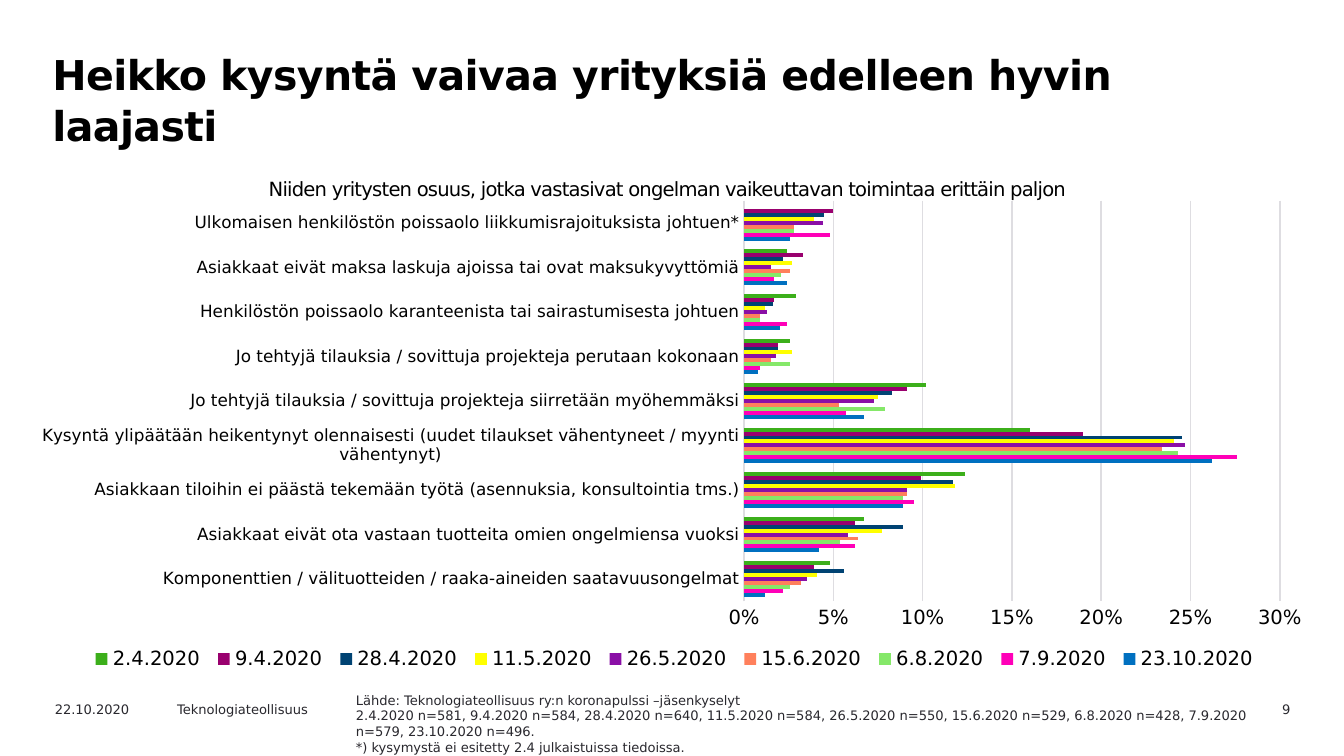
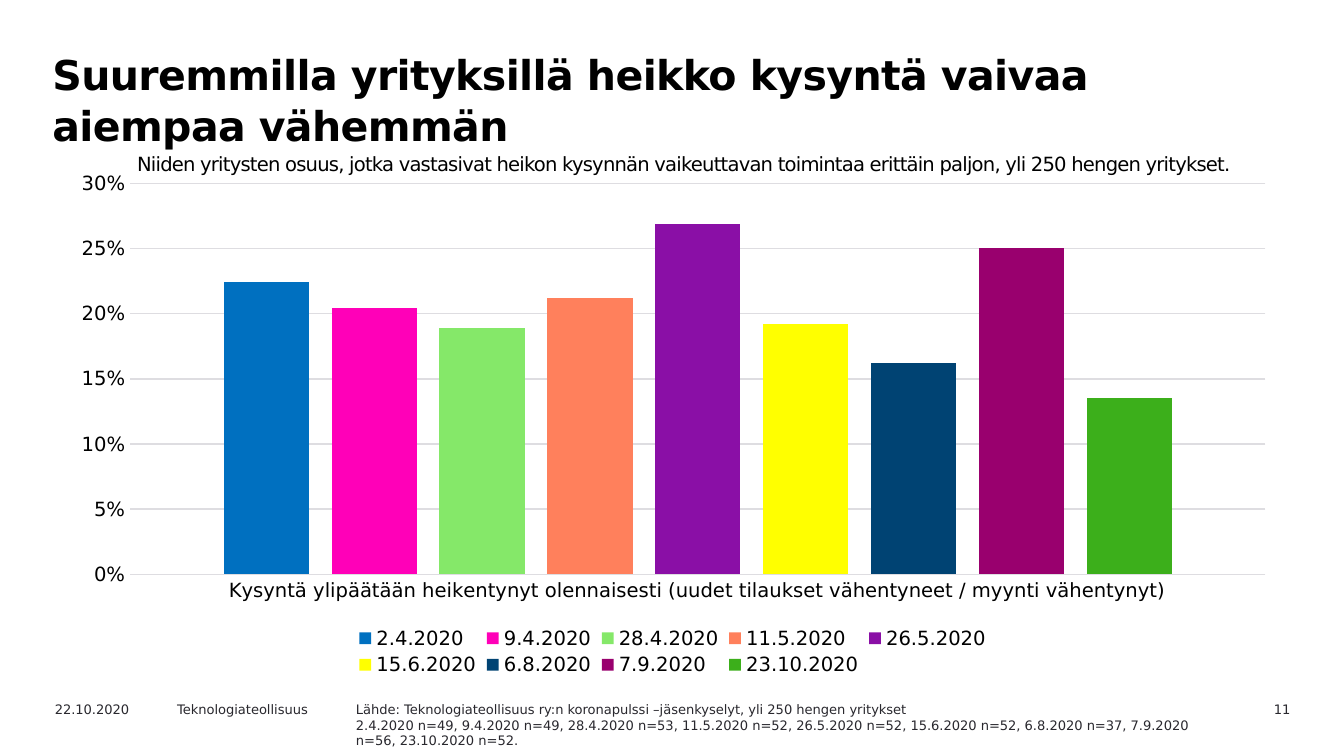
from dataclasses import dataclass
from typing import NamedTuple, Optional

from lxml.etree import SubElement
from pptx import Presentation
from pptx.chart.chart import Chart
from pptx.chart.data import CategoryChartData
from pptx.dml.color import RGBColor
from pptx.enum.chart import XL_CHART_TYPE, XL_LEGEND_POSITION, XL_TICK_MARK
from pptx.enum.text import MSO_ANCHOR, MSO_AUTO_SIZE, PP_ALIGN
from pptx.oxml.ns import qn
from pptx.slide import Slide
from pptx.text.text import TextFrame
from pptx.util import Inches, Pt

CELL = 0.1  # inches per grid column and row
COLS, ROWS = 100, 56.25


class Box(NamedTuple):
    """Left, top, width and height, in grid cells or percent of a chart."""
    left: float
    top: float
    width: float
    height: float


class Type(NamedTuple):
    size: float
    color: str
    bold: bool = False
    track: int = 0  # letter spacing, hundredths of a point


@dataclass(frozen=True)
class Theme:
    font: str = "DejaVu Sans"
    ink: str = "000000"
    soft: str = "29282E"
    rule: str = "DEDDE1"
    line: float = 0.75
    title: Type = Type(22, "000000", True, -30)
    lead: float = 27
    note: Type = Type(7, "29282E")
    head: Type = Type(10.5, "000000", False, -40)
    base: float = 10
    label: float = 10.5
    fills: tuple[str, ...] = (
        "0070C0", "FF00B8", "85E869", "FF805C", "8A0FA6",
        "FFFF00", "004373", "99006E", "3CAF1B")


THEME = Theme()
TITLE = Box(2.8, 3.1, 87.4, 7.1)
DATES = ("2.4.2020", "9.4.2020", "28.4.2020", "11.5.2020", "26.5.2020",
         "15.6.2020", "6.8.2020", "7.9.2020", "23.10.2020")
DEMAND = ("Kysyntä ylipäätään heikentynyt olennaisesti "
          "(uudet tilaukset vähentyneet / myynti vähentynyt)")


@dataclass(frozen=True)
class Plot:
    kind: XL_CHART_TYPE
    box: Box
    area: Box
    key: Box
    cats: tuple[str, ...]
    names: tuple[str, ...]
    rows: tuple[tuple[Optional[float], ...], ...]
    size: float
    overlap: int = 0
    top: Optional[float] = None


@dataclass(frozen=True)
class Page:
    number: int
    title: str
    head: str
    head_box: Box
    source: tuple[str, ...]
    source_box: Box
    plot: Plot


PAGES = (
    Page(
        9, "Heikko kysyntä vaivaa yrityksiä edelleen hyvin laajasti",
        "Niiden yritysten osuus, jotka vastasivat ongelman vaikeuttavan "
        "toimintaa erittäin paljon",
        Box(19.6, 12.8, 64.6, 2.6),
        ("Lähde: Teknologiateollisuus ry:n koronapulssi –jäsenkyselyt",
         "2.4.2020 n=581, 9.4.2020 n=584, 28.4.2020 n=640, 11.5.2020 n=584, "
         "26.5.2020 n=550, 15.6.2020 n=529, 6.8.2020 n=428, 7.9.2020 n=579, "
         "23.10.2020 n=496.",
         "*) kysymystä ei esitetty 2.4 julkaistuissa tiedoissa."),
        Box(25.5, 51, 68.6, 3.2),
        Plot(
            XL_CHART_TYPE.BAR_CLUSTERED,
            Box(1.2, 14.2, 97.6, 36.6),
            Box(55.5, 2, 40.85, 81.5), Box(5.2, 92.2, 90, 6),
            ("Komponenttien / välituotteiden / raaka-aineiden saatavuusongelmat",
             "Asiakkaat eivät ota vastaan tuotteita omien ongelmiensa vuoksi",
             "Asiakkaan tiloihin ei päästä tekemään työtä "
             "(asennuksia, konsultointia tms.)",
             DEMAND,
             "Jo tehtyjä tilauksia / sovittuja projekteja siirretään myöhemmäksi",
             "Jo tehtyjä tilauksia / sovittuja projekteja perutaan kokonaan",
             "Henkilöstön poissaolo karanteenista tai sairastumisesta johtuen",
             "Asiakkaat eivät maksa laskuja ajoissa tai ovat maksukyvyttömiä",
             "Ulkomaisen henkilöstön poissaolo liikkumisrajoituksista johtuen*"),
            DATES[::-1],
            ((0.012, 0.042, 0.089, 0.262, 0.067, 0.008, 0.02, 0.024, 0.026),
             (0.022, 0.062, 0.095, 0.276, 0.057, 0.009, 0.024, 0.017, 0.048),
             (0.026, 0.054, 0.089, 0.243, 0.079, 0.026, 0.009, 0.021, 0.028),
             (0.032, 0.064, 0.091, 0.234, 0.053, 0.015, 0.009, 0.026, 0.028),
             (0.035, 0.058, 0.091, 0.247, 0.073, 0.018, 0.013, 0.015, 0.044),
             (0.041, 0.077, 0.118, 0.241, 0.075, 0.027, 0.012, 0.027, 0.039),
             (0.056, 0.089, 0.117, 0.245, 0.083, 0.019, 0.016, 0.022, 0.045),
             (0.039, 0.062, 0.099, 0.19, 0.091, 0.019, 0.017, 0.033, 0.05),
             (0.048, 0.067, 0.124, 0.16, 0.102, 0.026, 0.029, 0.024, None)),
            size=9, top=0.3)),
    Page(
        11, "Suuremmilla yrityksillä heikko kysyntä vaivaa aiempaa vähemmän",
        "Niiden yritysten osuus, jotka vastasivat heikon kysynnän vaikeuttavan "
        "toimintaa erittäin paljon, yli 250 hengen yritykset.",
        Box(9.8, 10.9, 86.1, 2.6),
        ("Lähde: Teknologiateollisuus ry:n koronapulssi –jäsenkyselyt, "
         "yli 250 hengen yritykset",
         "2.4.2020 n=49, 9.4.2020 n=49, 28.4.2020 n=53, 11.5.2020 n=52, "
         "26.5.2020 n=52, 15.6.2020 n=52, 6.8.2020 n=37, 7.9.2020 n=56, "
         "23.10.2020 n=52."),
        Box(25.5, 51.7, 67, 4),
        Plot(
            XL_CHART_TYPE.COLUMN_CLUSTERED,
            Box(4.2, 12.1, 91.8, 38.7),
            Box(6, 4, 92, 75.2), Box(23.7, 88.5, 52.5, 11),
            (DEMAND,), DATES,
            ((0.224,), (0.204,), (0.189,), (0.212,), (0.269,),
             (0.192,), (0.162,), (0.25,), (0.135,)),
            size=THEME.label, overlap=-27)),
)


def place(box: Box) -> list[int]:
    return [Inches(n * CELL) for n in box]


def write(frame: TextFrame, lines: tuple[str, ...], style: Type,
          align: PP_ALIGN = PP_ALIGN.LEFT) -> None:
    frame.word_wrap = True
    frame.auto_size = MSO_AUTO_SIZE.NONE
    frame.vertical_anchor = MSO_ANCHOR.TOP
    frame.text = "\n".join(lines)
    for para in frame.paragraphs:
        para.alignment = align
        font = para.font
        font.name, font.size, font.bold = THEME.font, Pt(style.size), style.bold
        font.color.rgb = RGBColor.from_string(style.color)
        if style.track:
            for run in para.runs:
                run._r.get_or_add_rPr().set("spc", str(style.track))


def add_text(slide: Slide, box: Box, lines: tuple[str, ...], style: Type,
             align: PP_ALIGN = PP_ALIGN.LEFT) -> TextFrame:
    frame = slide.shapes.add_textbox(*place(box)).text_frame
    write(frame, lines, style, align)
    return frame


def add_title(slide: Slide, text: str) -> None:
    shape = slide.shapes.title
    shape.left, shape.top, shape.width, shape.height = place(TITLE)
    frame = shape.text_frame
    write(frame, (text,), THEME.title)
    frame.margin_left, frame.margin_top = Inches(0.11), Inches(0.05)
    para = frame.paragraphs[0]
    para.line_spacing, para.space_before = Pt(THEME.lead), Pt(0)


def add_foot(slide: Slide, number: int) -> None:
    for left, width, text, align in (
            (87.6, 9.4, str(number), PP_ALIGN.RIGHT),
            (3.1, 10, "22.10.2020", PP_ALIGN.LEFT),
            (12.2, 14.2, "Teknologiateollisuus", PP_ALIGN.LEFT)):
        add_text(slide, Box(left, 51.7, width, 1.8), (text,), THEME.note, align)


def add_head(slide: Slide, box: Box, text: str) -> None:
    frame = add_text(slide, box, (text,), THEME.head)
    for side in ("left", "top", "right", "bottom"):
        setattr(frame, f"margin_{side}", Inches(0.04))
    frame.auto_size = MSO_AUTO_SIZE.SHAPE_TO_FIT_TEXT


def pin(part, box: Box, index: int, inner: bool = False) -> None:
    """Fix a chart part at percentages of the chart's size."""
    for old in part.findall(qn("c:layout")):
        part.remove(old)
    layout = SubElement(part, qn("c:layout"))
    part.insert(index, layout)
    manual = SubElement(layout, qn("c:manualLayout"))
    items = [("layoutTarget", "inner")] if inner else []
    items += [("xMode", "edge"), ("yMode", "edge")]
    items += [(tag, n / 100) for tag, n in zip("xywh", box)]
    for tag, value in items:
        SubElement(manual, qn(f"c:{tag}")).set("val", str(value))


def set_font(font, size: float, color: str) -> None:
    font.name, font.size = THEME.font, Pt(size)
    font.color.rgb = RGBColor.from_string(color)


def set_line(line) -> None:
    line.color.rgb = RGBColor.from_string(THEME.rule)
    line.width = Pt(THEME.line)


def set_axes(chart: Chart, plot: Plot) -> None:
    cat, val = chart.category_axis, chart.value_axis
    for axis, size in ((cat, plot.size), (val, THEME.label)):
        axis.major_tick_mark = axis.minor_tick_mark = XL_TICK_MARK.NONE
        set_font(axis.tick_labels.font, size, THEME.ink)
    set_line(cat.format.line)
    val.format.line.fill.background()
    val.has_major_gridlines = True
    set_line(val.major_gridlines.format.line)
    val.major_unit = 0.05
    if plot.top is not None:
        val.minimum_scale, val.maximum_scale = 0, plot.top
    val.tick_labels.number_format = "0%"
    val.tick_labels.number_format_is_linked = False


def add_plot(slide: Slide, plot: Plot) -> None:
    data = CategoryChartData(number_format="0%")
    data.categories = plot.cats
    for name, row in zip(plot.names, plot.rows):
        data.add_series(name, row)
    chart = slide.shapes.add_chart(plot.kind, *place(plot.box), data).chart
    set_font(chart.font, THEME.base, THEME.soft)
    chart.has_title = False
    set_axes(chart, plot)
    bars = chart.plots[0]
    bars.vary_by_categories = False
    bars.gap_width, bars.overlap = 219, plot.overlap
    for series, color in zip(bars.series, THEME.fills):
        series.invert_if_negative = False
        series.format.fill.solid()
        series.format.fill.fore_color.rgb = RGBColor.from_string(color)
    chart.has_legend = True
    legend = chart.legend
    legend.position = XL_LEGEND_POSITION.BOTTOM
    legend.include_in_layout = False
    set_font(legend.font, THEME.label, THEME.ink)
    pin(legend._element, plot.key, 1)
    pin(chart._chartSpace.chart.plotArea, plot.area, 0, inner=True)


def main() -> None:
    deck = Presentation()
    deck.slide_width, deck.slide_height = Inches(COLS * CELL), Inches(ROWS * CELL)
    for page in PAGES:
        slide = deck.slides.add_slide(deck.slide_layouts[5])
        add_title(slide, page.title)
        add_foot(slide, page.number)
        add_plot(slide, page.plot)
        add_text(slide, page.source_box, page.source, THEME.note)
        add_head(slide, page.head_box, page.head)
    deck.save("out.pptx")


if __name__ == "__main__":
    main()
